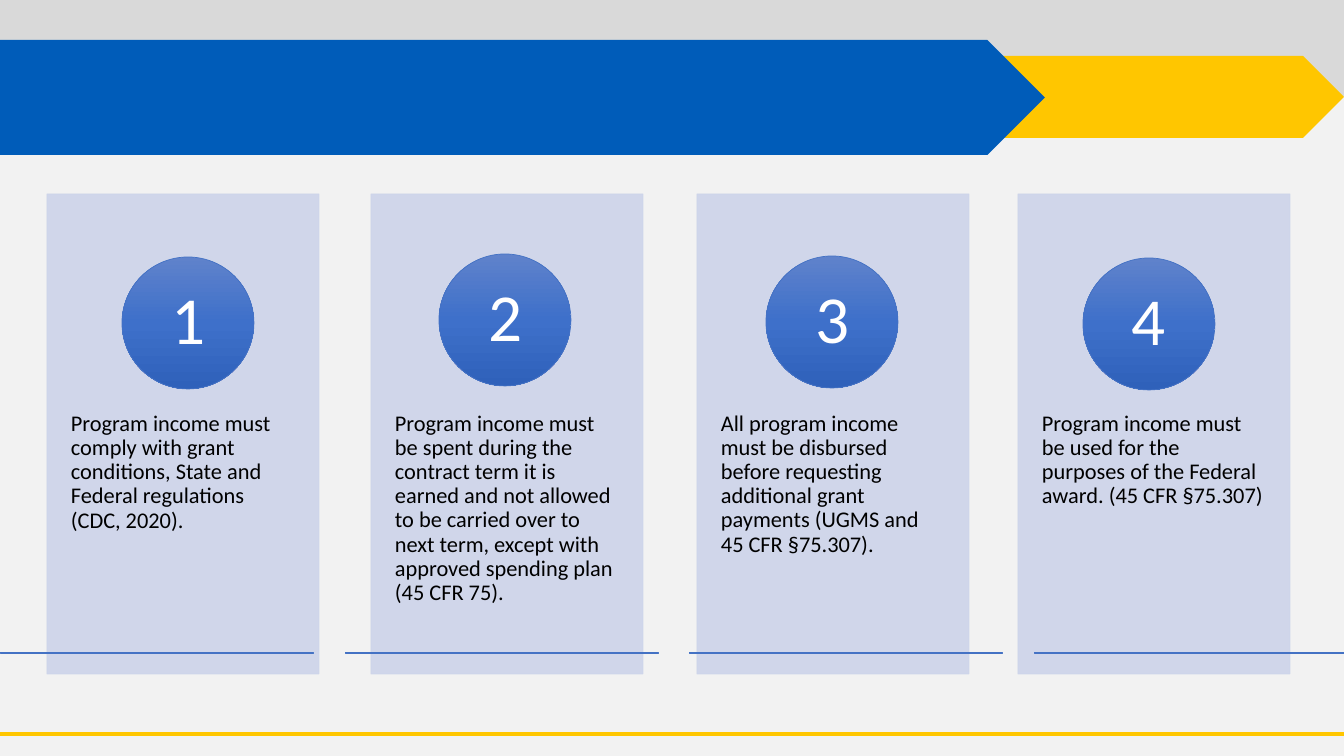
"""Build a slide of four numbered cards on the rules for program income."""
from copy import deepcopy

from lxml import etree
from pptx import Presentation
from pptx import util as u
from pptx.dml.color import RGBColor
from pptx.enum import shapes, text
from pptx.oxml.ns import qn

SLIDE = (1344, 756)
EMU_PER_INCH, PX_PER_INCH = 914400, 100.8
BLUE, YELLOW, GREY, PAPER = "005CB9", "FFC600", "D9D9D9", "F2F2F2"
CARD_FILL, ACCENT, BLACK, WHITE = "CDD4EA", "4472C4", "000000", "FFFFFF"
GRADIENT = [(0, "5F82CB"), (0.5, "3E70CA"), (1, "2F61BA")]

KIND = shapes.MSO_SHAPE
HEADER = [
    (KIND.RECTANGLE, (0, 0, 1344, 96), GREY),
    (KIND.PENTAGON, (715, 56, 629, 82), YELLOW),
    (KIND.PENTAGON, (0, 40, 1045, 115), BLUE),
]
FOOTER_Y = 734

# card left, circle left, circle top, statement height, statement
CARDS = [
    (47, 122, 257, 174, "Program income must comply with grant conditions, "
     "State and Federal regulations (CDC, 2020)."),
    (371, 439, 254, 252, "Program income must be spent during the contract term "
     "it is earned and not allowed to be carried over to next term, "
     "except with approved spending plan (45 CFR 75)."),
    (697, 766, 256, 200, "All program income must be disbursed before requesting "
     "additional grant payments (UGMS and 45 CFR §75.307)."),
    (1018, 1083, 258, 171, "Program income must be used for the purposes of the "
     "Federal award. (45 CFR §75.307)"),
]
CARD_TOP, CARD_W, CARD_H = 194, 272, 480
STATEMENT_TOP, CIRCLE = 388, 132
RULE_Y, RULE_W, RULE_H = 652, 313, 1
RULE_PITCH = 1034 / 3

STATEMENT = {"size": 16, "color": BLACK, "margin": 24,
             "anchor": text.MSO_ANCHOR.TOP, "align": text.PP_ALIGN.LEFT}
NUMBER = {"size": 48, "color": WHITE, "margin": 1,
          "anchor": text.MSO_ANCHOR.MIDDLE, "align": text.PP_ALIGN.CENTER}


def px(length):
    return u.Emu(round(length * EMU_PER_INCH / PX_PER_INCH))


def rgb(color):
    return RGBColor.from_string(color)


def add_solid(slide, kind, box, color):
    shape = slide.shapes.add_shape(kind, *map(px, box))
    shape.shadow.inherit = False
    shape.fill.solid()
    shape.fill.fore_color.rgb = rgb(color)
    shape.line.fill.background()
    return shape


def add_outline(shape, color):
    shape.line.color.rgb = rgb(color)
    shape.line.width = u.Pt(0.5)


def add_card(slide, box):
    card = add_solid(slide, KIND.RECTANGLE, box, CARD_FILL)
    add_outline(card, CARD_FILL)
    for color in card._element.spPr.iter(qn("a:srgbClr")):
        etree.SubElement(color, qn("a:alpha"), val="90000")


def add_shaded(slide, kind, box):
    shape = add_solid(slide, kind, box, ACCENT)
    add_outline(shape, ACCENT)
    shape.fill.gradient()
    shape.fill.gradient_angle = 270
    stops = shape._element.spPr.find(".//" + qn("a:gsLst"))
    stops.append(deepcopy(stops[0]))
    for stop, (position, color) in zip(shape.fill.gradient_stops, GRADIENT):
        stop.position = position
        stop.color.rgb = rgb(color)


def add_words(slide, box, words, style):
    frame = slide.shapes.add_textbox(*map(px, box)).text_frame
    margin = px(style["margin"])
    layout = {"word_wrap": True, "auto_size": text.MSO_AUTO_SIZE.SHAPE_TO_FIT_TEXT,
              "vertical_anchor": style["anchor"], "margin_left": margin,
              "margin_right": margin, "margin_top": margin, "margin_bottom": margin}
    for name, value in layout.items():
        setattr(frame, name, value)
    paragraph = frame.paragraphs[0]
    paragraph.alignment = style["align"]
    paragraph.line_spacing = 0.9
    run = paragraph.add_run()
    run.text = words
    for name, value in {"name": "Calibri", "size": u.Pt(style["size"])}.items():
        setattr(run.font, name, value)
    run.font.color.rgb = rgb(style["color"])


def add_footer(slide):
    footer = slide.shapes.add_connector(
        shapes.MSO_CONNECTOR.STRAIGHT, 0, px(FOOTER_Y), px(SLIDE[0]), px(FOOTER_Y))
    footer.line.color.rgb = rgb(YELLOW)
    footer.line.width = u.Pt(3)
    etree.SubElement(footer._element.spPr, qn("a:effectLst"))


def main():
    deck = Presentation()
    deck.slide_width, deck.slide_height = map(px, SLIDE)
    slide = deck.slides.add_slide(deck.slide_layouts[6])
    slide.background.fill.solid()
    slide.background.fill.fore_color.rgb = rgb(PAPER)
    for kind, box, color in HEADER:
        add_solid(slide, kind, box, color)
    add_footer(slide)
    for index, (left, circle_x, circle_y, height, statement) in enumerate(CARDS):
        add_card(slide, (left, CARD_TOP, CARD_W, CARD_H))
        add_words(slide, (left, STATEMENT_TOP, CARD_W, height), statement, STATEMENT)
        add_shaded(slide, KIND.OVAL, (circle_x, circle_y, CIRCLE, CIRCLE))
        add_words(slide, (circle_x + 28, circle_y + 30, 76, 71), str(index + 1), NUMBER)
        rule_x = round(index * RULE_PITCH)
        rule_w = min(RULE_W, SLIDE[0] - rule_x)
        add_shaded(slide, KIND.RECTANGLE, (rule_x, RULE_Y, rule_w, RULE_H))
    deck.save("out.pptx")


if __name__ == "__main__":
    main()
